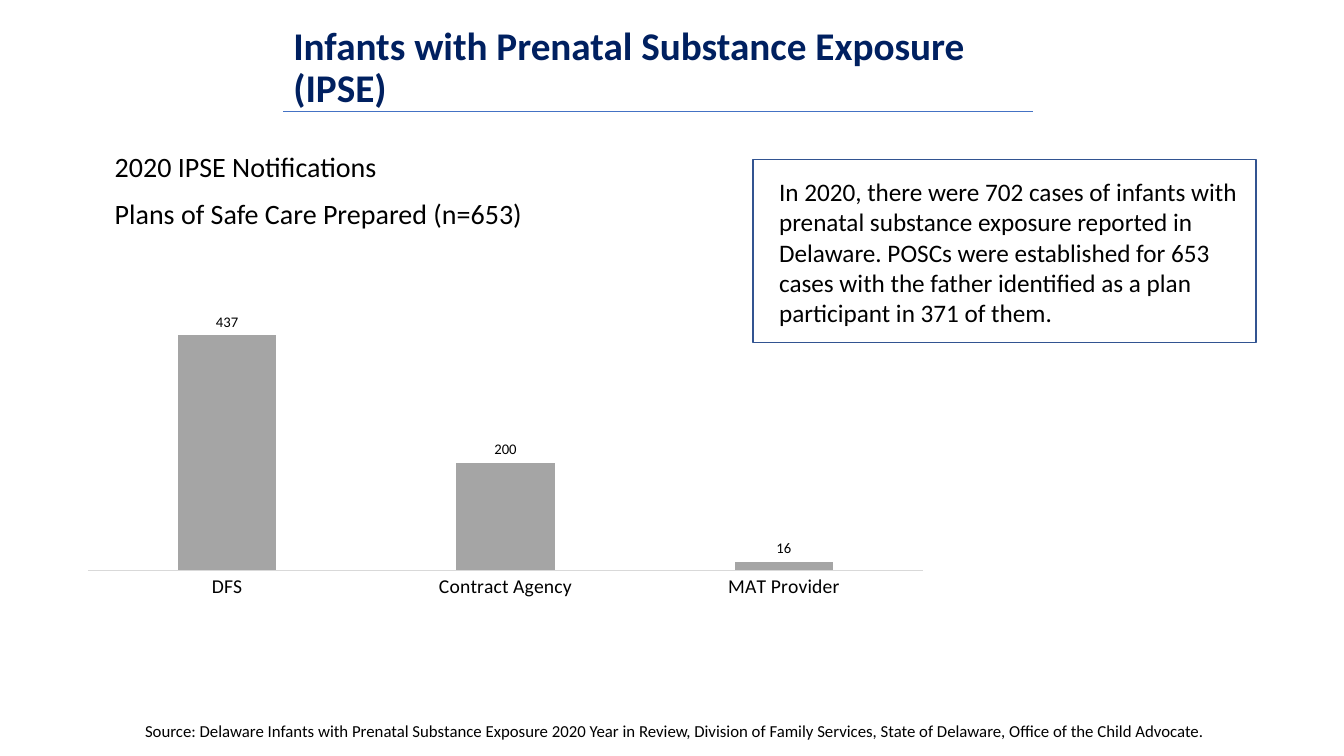
from pptx import Presentation
from pptx.chart.data import CategoryChartData
from pptx.dml.color import RGBColor
from pptx.enum.chart import XL_CHART_TYPE as ChartType, XL_LABEL_POSITION as LabelPos
from pptx.enum.chart import XL_TICK_MARK as TickMark
from pptx.enum.shapes import MSO_CONNECTOR as Connector, MSO_SHAPE as Shape
from pptx.enum.text import MSO_ANCHOR as Anchor, MSO_AUTO_SIZE as AutoSize, PP_ALIGN as Align
from pptx.oxml.ns import qn
from pptx.util import Pt
from lxml import etree

FONT = "Calibri"
COLORS = {
    "navy": "002060", "text": "000000", "rule": "4472C4",
    "frame": "325491", "bar": "A5A5A5", "axis": "D9D9D9",
}


def style_font(font, size, color="text", bold=False):
    font.name = FONT
    font.size = Pt(size)
    font.bold = bold
    font.color.rgb = RGBColor.from_string(COLORS[color])


def add_text(box, size, lines, line_spacing=1.0, space_after=0):
    left, top, width, height = (Pt(v) for v in box)
    frame = slide.shapes.add_textbox(left, top, width, height).text_frame
    frame.word_wrap = True
    for i, line in enumerate(lines):
        paragraph = frame.paragraphs[0] if i == 0 else frame.add_paragraph()
        paragraph.line_spacing = line_spacing
        paragraph.space_after = Pt(space_after)
        run = paragraph.add_run()
        run.text = line
        style_font(run.font, size)


prs = Presentation()
prs.slide_width, prs.slide_height = Pt(960), Pt(540)
slide = prs.slides.add_slide(prs.slide_layouts[5])

# Title
title = slide.shapes.title
title.left, title.top, title.width, title.height = Pt(202.3), Pt(-2.9), Pt(555), Pt(104.4)
title.text_frame.word_wrap = True
title.text_frame.auto_size = AutoSize.NONE
title.text_frame.vertical_anchor = Anchor.MIDDLE
heading = title.text_frame.paragraphs[0]
heading.alignment = Align.LEFT
heading.line_spacing = 0.9
heading_run = heading.add_run()
heading_run.text = "Infants with Prenatal Substance Exposure (IPSE)"
style_font(heading_run.font, 28, "navy", True)

# Source line
add_text((96.5, 511.2, 785, 21.6), 12, [
    "Source: Delaware Infants with Prenatal Substance Exposure 2020 Year in Review, "
    "Division of Family Services, State of Delaware, Office of the Child Advocate."])

# Rule under the title
rule = slide.shapes.add_connector(Connector.STRAIGHT, Pt(202.3), Pt(79.2), Pt(738), Pt(79.2))
rule.line.color.rgb = RGBColor.from_string(COLORS["rule"])
rule.line.width = Pt(0.5)
etree.SubElement(rule._element.spPr, qn("a:effectLst"))

# Chart of plans by preparer
plans = CategoryChartData()
plans.categories = ["DFS", "Contract Agency", "MAT Provider"]
plans.add_series("Series 1", [437, 200, 16])
chart = slide.shapes.add_chart(
    ChartType.COLUMN_CLUSTERED, Pt(50.4), Pt(211), Pt(621.4), Pt(221), plans).chart
style_font(chart.font, 18)
chart.has_legend = False
chart.has_title = False
chart.value_axis.visible = False
chart.value_axis.has_major_gridlines = False
chart.value_axis.minimum_scale = 0
chart.value_axis.maximum_scale = 500

preparers = chart.category_axis
preparers.major_tick_mark = TickMark.NONE
preparers.format.line.color.rgb = RGBColor.from_string(COLORS["axis"])
preparers.format.line.width = Pt(0.75)
style_font(preparers.tick_labels.font, 14)

plot = chart.plots[0]
plot.gap_width = 182
plot.vary_by_categories = False
bars = plot.series[0]
bars.format.fill.solid()
bars.format.fill.fore_color.rgb = RGBColor.from_string(COLORS["bar"])
counts = bars.data_labels
counts.show_value = True
counts.position = LabelPos.OUTSIDE_END
style_font(counts.font, 10.5)

# Chart heading
add_text((74.9, 101.5, 347.8, 97.2), 20,
         ["2020 IPSE Notifications", "Plans of Safe Care Prepared (n=653)"], 1.07, 8)

# Framed summary
add_text((549.4, 122.4, 344.9, 116.6), 18, [
    "In 2020, there were 702 cases of infants with prenatal substance exposure reported in "
    "Delaware. POSCs were established for 653 cases with the father identified as a plan "
    "participant in 371 of them."])
summary_frame = slide.shapes.add_shape(Shape.RECTANGLE, Pt(537.8), Pt(113.8), Pt(359.3), Pt(131))
summary_frame.shadow.inherit = False
summary_frame.fill.background()
summary_frame.line.color.rgb = RGBColor.from_string(COLORS["frame"])
summary_frame.line.width = Pt(1)

prs.save("out.pptx")
